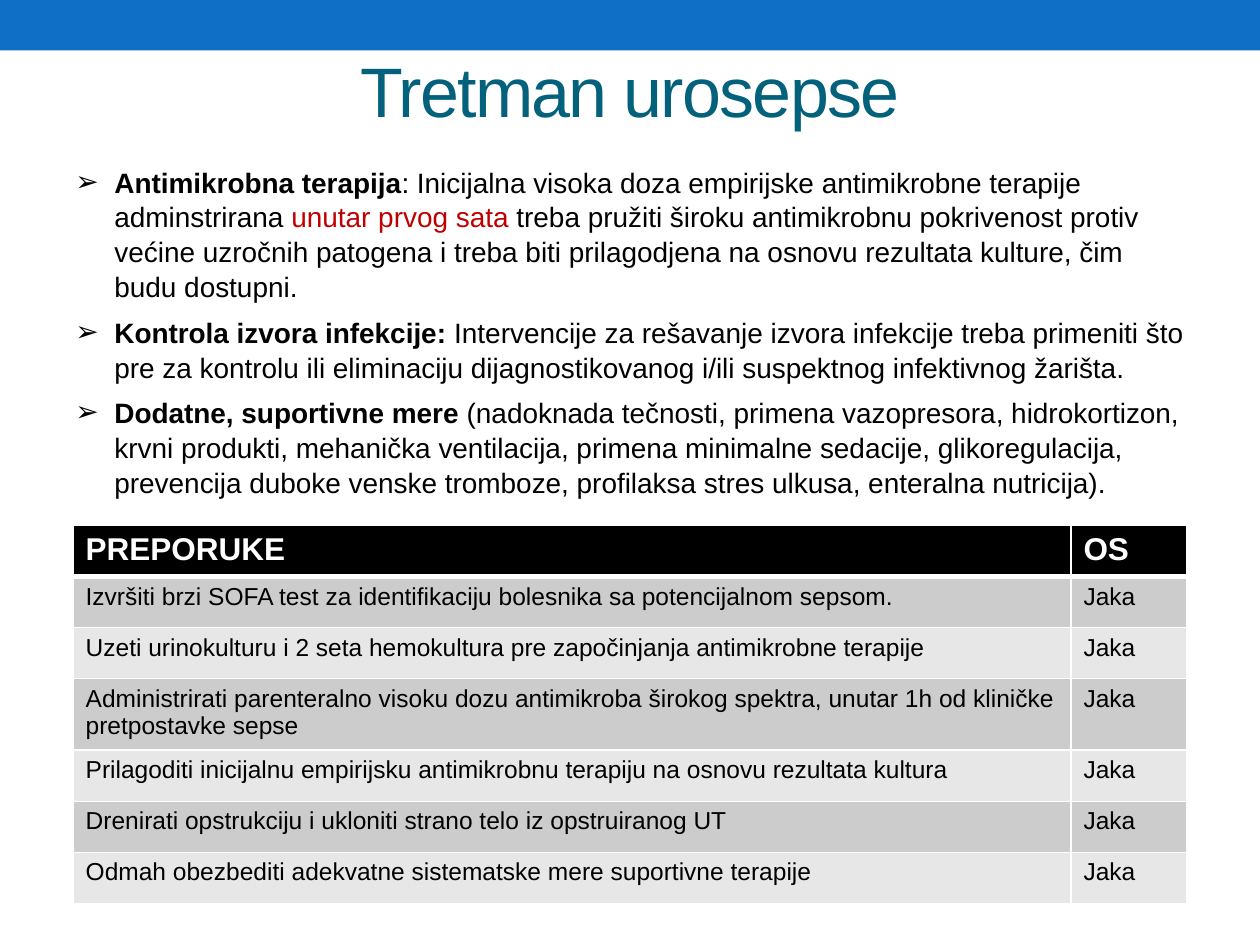
from lxml import etree
from pptx import Presentation
from pptx.dml.color import RGBColor
from pptx.enum.shapes import MSO_SHAPE
from pptx.enum.text import MSO_ANCHOR, PP_ALIGN
from pptx.oxml.ns import qn
from pptx.util import Inches, Pt

RECTANGLE = MSO_SHAPE.RECTANGLE
MIDDLE = MSO_ANCHOR.MIDDLE
TOP = MSO_ANCHOR.TOP
CENTER = PP_ALIGN.CENTER
LEFT = PP_ALIGN.LEFT

BLUE = RGBColor(0x0F, 0x6F, 0xC6)
TEAL = RGBColor(0x04, 0x61, 0x7B)
RED = RGBColor(0xC0, 0x00, 0x00)
BLACK = RGBColor(0x00, 0x00, 0x00)
WHITE = RGBColor(0xFF, 0xFF, 0xFF)
BANDS = (RGBColor(0xCC, 0xCC, 0xCC), RGBColor(0xE7, 0xE7, 0xE7))

FONT = "Arial"
WIDTH, HEIGHT = Inches(10), Inches(7.5)
MARGIN = WIDTH * 0.05
CONTENT_WIDTH = WIDTH - 2 * MARGIN

# Each span is (text, bold, colour).
MEASURES = [
    [("Antimikrobna terapija", True, BLACK),
     (": Inicijalna visoka doza empirijske antimikrobne terapije adminstrirana ", False, BLACK),
     ("unutar prvog sata", False, RED),
     (" treba pružiti široku antimikrobnu pokrivenost protiv većine uzročnih patogena "
      "i treba biti prilagodjena na osnovu rezultata kulture, čim budu dostupni.", False, BLACK)],
    [("Kontrola izvora infekcije:", True, BLACK),
     (" Intervencije za rešavanje izvora infekcije treba primeniti što pre za kontrolu "
      "ili eliminaciju dijagnostikovanog i/ili suspektnog infektivnog žarišta.", False, BLACK)],
    [("Dodatne, suportivne mere ", True, BLACK),
     ("(nadoknada tečnosti, primena vazopresora, hidrokortizon, krvni produkti, "
      "mehanička ventilacija, primena minimalne sedacije, glikoregulacija, prevencija "
      "duboke venske tromboze, profilaksa stres ulkusa, enteralna nutricija).", False, BLACK)],
]

HEADER = ("PREPORUKE", "OS")
STRENGTH = "Jaka"
RECOMMENDATIONS = [
    "Izvršiti brzi SOFA test za identifikaciju bolesnika sa potencijalnom sepsom.",
    "Uzeti urinokulturu i 2 seta hemokultura pre započinjanja antimikrobne terapije",
    "Administrirati parenteralno visoku dozu antimikroba širokog spektra, "
    "unutar 1h od kliničke pretpostavke sepse",
    "Prilagoditi inicijalnu empirijsku antimikrobnu terapiju na osnovu rezultata kultura",
    "Drenirati opstrukciju i ukloniti strano telo iz opstruiranog UT",
    "Odmah obezbediti adekvatne sistematske mere suportivne terapije",
]


def add_span(para, text, size, color, bold=False):
    span = para.add_run()
    span.text = text
    span.font.name = FONT
    span.font.size = Pt(size)
    span.font.bold = bold
    span.font.color.rgb = color
    return span


def add_text_box(page, top, height, anchor):
    box = page.shapes.add_textbox(int(MARGIN), top, int(CONTENT_WIDTH), height)
    box.text_frame.word_wrap = True
    box.text_frame.vertical_anchor = anchor
    return box.text_frame


def add_band(page):
    band = page.shapes.add_shape(RECTANGLE, 0, 0, WIDTH, Inches(0.4))
    band.shadow.inherit = False
    band.fill.solid()
    band.fill.fore_color.rgb = BLUE
    band.line.fill.background()


def add_title(page, text):
    para = add_text_box(page, Inches(0.17), Inches(1.08), MIDDLE).paragraphs[0]
    para.alignment = CENTER
    span = add_span(para, text, 40, TEAL)
    span.font._element.set("spc", "-100")


def set_bullet(para, indent):
    properties = para._p.get_or_add_pPr()
    properties.set("marL", str(indent))
    properties.set("indent", str(-indent))
    etree.SubElement(properties, qn("a:buFont"), typeface=FONT)
    etree.SubElement(properties, qn("a:buChar"), char="➢")


def add_bullets(page, items):
    frame = add_text_box(page, Inches(1.25), Inches(2.69), TOP)
    for index, spans in enumerate(items):
        para = frame.add_paragraph() if index else frame.paragraphs[0]
        para.alignment = LEFT
        para.line_spacing = 1.04
        para.space_after = Pt(6)
        set_bullet(para, Inches(0.31))
        for text, bold, color in spans:
            add_span(para, text, 16, color, bold)


def set_borders(cell, widths):
    """Draw white cell borders; widths maps an edge tag to points."""
    properties = cell._tc.get_or_add_tcPr()
    for position, (edge, width) in enumerate(widths.items()):
        line = etree.Element(qn(f"a:{edge}"), w=str(Pt(width)))
        fill = etree.SubElement(line, qn("a:solidFill"))
        etree.SubElement(fill, qn("a:srgbClr"), val=str(WHITE))
        properties.insert(position, line)


def fill_cell(cell, text, size, color, fill, bold, top, bottom):
    cell.fill.solid()
    cell.fill.fore_color.rgb = fill
    add_span(cell.text_frame.paragraphs[0], text, size, color, bold)
    set_borders(cell, {"lnL": 1, "lnR": 1, "lnT": top, "lnB": bottom})


def add_recommendations(page):
    rows = [HEADER] + [(text, STRENGTH) for text in RECOMMENDATIONS]
    column_widths = (Inches(7.92), Inches(0.92))
    table = page.shapes.add_table(
        len(rows), len(HEADER), Inches(0.58), Inches(4.17),
        sum(column_widths), Inches(2.84)).table
    for column, width in zip(table.columns, column_widths):
        column.width = width
    for row, texts in enumerate(rows):
        header = row == 0
        for column, text in enumerate(texts):
            fill_cell(
                table.cell(row, column), text,
                size=18 if header else 14,
                color=WHITE if header else BLACK,
                fill=BLACK if header else BANDS[(row - 1) % 2],
                bold=header,
                top=3 if row == 1 else 1,
                bottom=3 if header else 1)


def main():
    deck = Presentation()
    deck.slide_width, deck.slide_height = WIDTH, HEIGHT
    page = deck.slides.add_slide(deck.slide_layouts[6])
    add_band(page)
    add_title(page, "Tretman urosepse")
    add_bullets(page, MEASURES)
    add_recommendations(page)
    deck.save("out.pptx")


if __name__ == "__main__":
    main()
